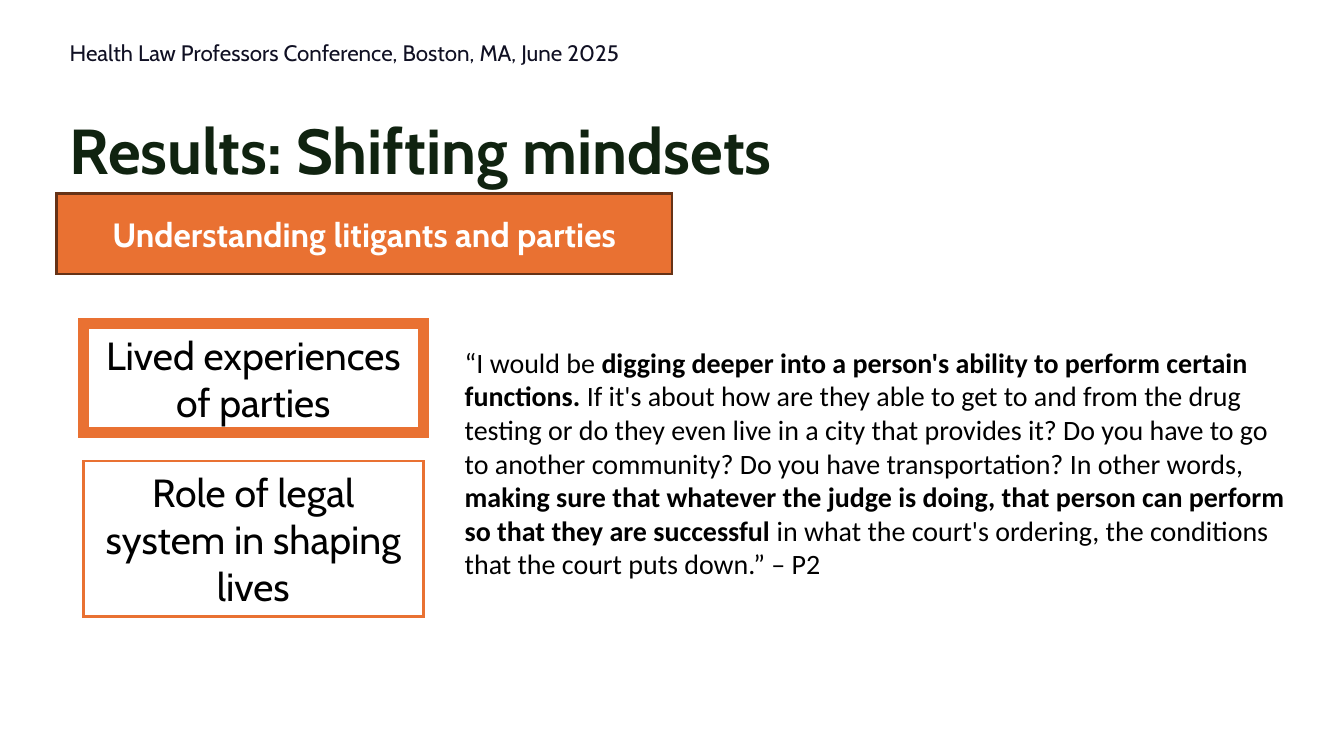
from lxml import etree
from pptx import Presentation
from pptx.dml.color import RGBColor
from pptx.enum.shapes import MSO_SHAPE
from pptx.enum.text import MSO_ANCHOR, PP_ALIGN
from pptx.oxml.ns import qn
from pptx.util import Inches, Pt

CONFERENCE = "Health Law Professors Conference, Boston, MA, June 2025"
TITLE = "Results: Shifting mindsets"
THEME = "Understanding litigants and parties"
TOPICS = [
    ("Lived experiences of parties", 0.81, 6),
    ("Role of legal system in shaping lives", 1.16, 1.5),
]
QUOTE = [
    ("“I would be ", False),
    ("digging deeper into a person's ability to perform certain functions.", True),
    (" If it's about how are they able to get to and from the drug testing or do "
     "they even live in a city that provides it? Do you have to go to another "
     "community? Do you have transportation? In other words, ", False),
    ("making sure that whatever the judge is doing, that person can perform so "
     "that they are successful ", True),
    ("in what the court's ordering, the conditions that the court puts down.” – P2", False),
]

WIDTH = 10
HEIGHT = WIDTH * 9 / 16
MARGIN = 0.42
HALF = WIDTH / 2 - MARGIN
TOPIC_LEFT, TOPIC_TOP, TOPIC_WIDTH, TOPIC_GAP = 0.62, 2.41, 2.53, 0.21
ORANGE, BROWN, WHITE, BLACK = "E97132", "663216", "FFFFFF", "000000"


def color(value):
    return RGBColor.from_string(value)


def write(shape, runs, size, ink, font="Cabin", bold=None,
          anchor=MSO_ANCHOR.MIDDLE, align=PP_ALIGN.LEFT, inset=0.1):
    frame = shape.text_frame
    frame.word_wrap = True
    frame.vertical_anchor = anchor
    frame.margin_left = frame.margin_right = Inches(0.1)
    frame.margin_top = frame.margin_bottom = Inches(inset)
    paragraph = frame.paragraphs[0]
    paragraph.alignment = align
    paragraph.font.name = font
    paragraph.font.size = Pt(size)
    paragraph.font.bold = bold
    paragraph.font.color.rgb = color(ink)
    for words, strong in runs:
        run = paragraph.add_run()
        run.text = words
        if strong:
            run.font.bold = True
    return paragraph


def add_text(slide, box, runs, size, ink, **style):
    return write(slide.shapes.add_textbox(*map(Inches, box)), runs, size, ink, **style)


def add_panel(slide, box, words, size, ink, fill, border, weight, **style):
    panel = slide.shapes.add_shape(MSO_SHAPE.RECTANGLE, *map(Inches, box))
    panel.shadow.inherit = False
    panel.fill.solid()
    panel.fill.fore_color.rgb = color(fill)
    panel.line.color.rgb = color(border)
    panel.line.width = Pt(weight)
    outline = panel.element.spPr.find(qn("a:ln"))
    etree.SubElement(outline, qn("a:miter"), lim="800000")
    write(panel, [(words, False)], size, ink, align=PP_ALIGN.CENTER, **style)


def main():
    deck = Presentation()
    deck.slide_width, deck.slide_height = Inches(WIDTH), Inches(HEIGHT)
    slide = deck.slides.add_slide(deck.slide_layouts[6])

    add_text(slide, (MARGIN, 0.77, WIDTH - 2 * MARGIN, 0.72), [(TITLE, False)],
             34, "102310", bold=True, anchor=MSO_ANCHOR.BOTTOM)
    add_panel(slide, (MARGIN, 1.44, HALF, 0.6), THEME, 18, WHITE,
              ORANGE, BROWN, 1.5, bold=True)

    top = TOPIC_TOP
    for words, height, weight in TOPICS:
        add_panel(slide, (TOPIC_LEFT, top, TOPIC_WIDTH, height), words, 21, BLACK,
                  WHITE, ORANGE, weight, inset=0.05)
        top += height + TOPIC_GAP

    add_text(slide, (3.36, 2.52, 6.36, 1.87), QUOTE, 15, BLACK, font="Calibri",
             anchor=MSO_ANCHOR.TOP, inset=0.05)
    conference = add_text(slide, (MARGIN, 0.23, HALF, 0.35), [(CONFERENCE, False)],
                          12, "101023")
    conference.line_spacing = 0.9
    conference.space_after = Pt(12)

    deck.save("out.pptx")


if __name__ == "__main__":
    main()
